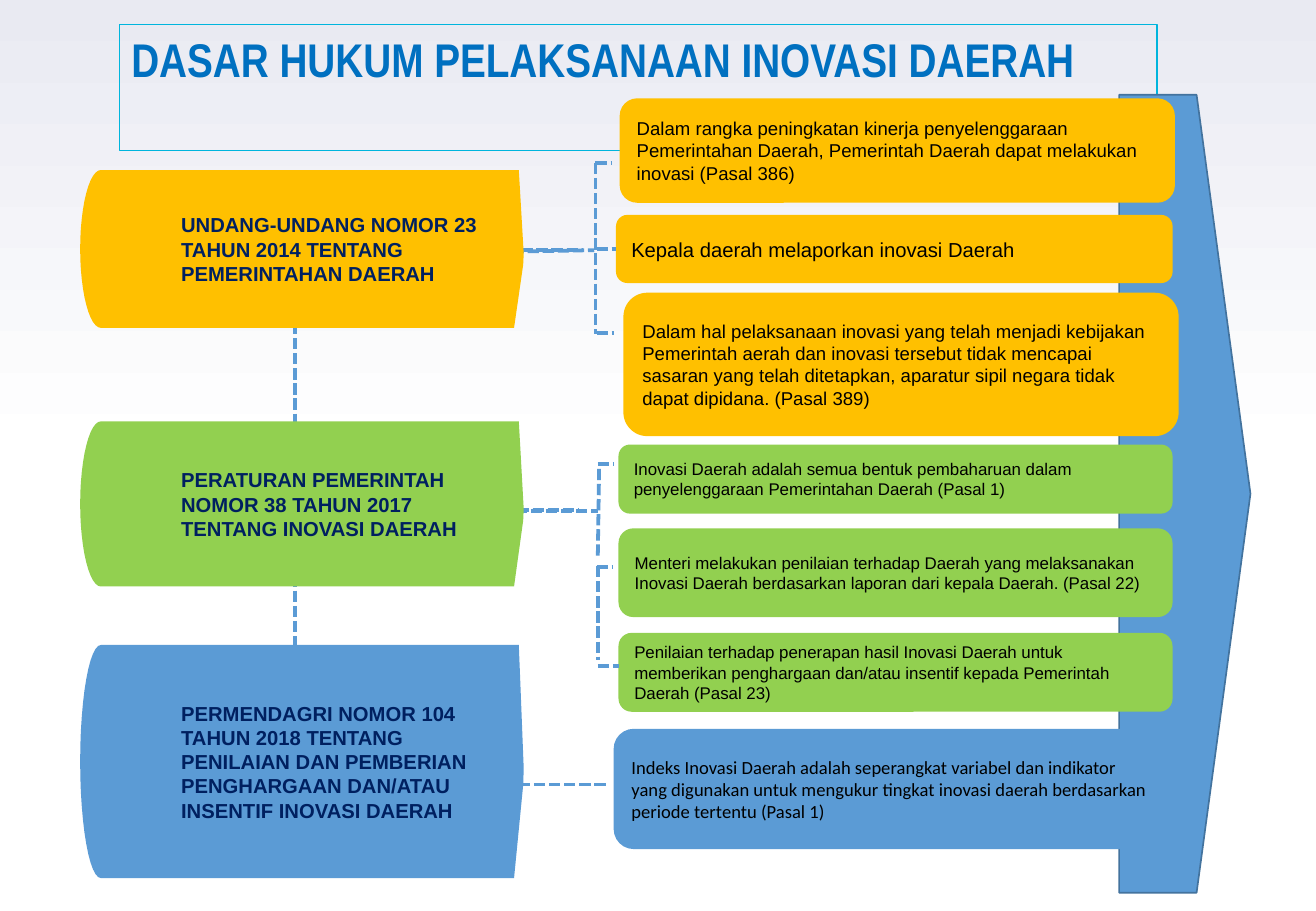
import math
import pptx
import pptx.util
import pptx.dml.color
import pptx.enum.dml
import pptx.enum.shapes
import pptx.enum.text
import pptx.oxml.ns
import lxml.etree

Pt = pptx.util.Pt
Shape = pptx.enum.shapes.MSO_SHAPE
Anchor = pptx.enum.text.MSO_ANCHOR

ORANGE, GREEN, BLUE = "FFC000", "92D050", "5B9BD5"


def rgb(value):
    return pptx.dml.color.RGBColor.from_string(value)


class LegalBasisSlide:
    TITLE = dict(name="Arial Narrow", size=Pt(28), bold=True, color="0070C0")
    CARD = dict(name="Arial", bold=False, color="000000")
    TAB = dict(name="Arial", size=Pt(12), bold=True, color="002060")

    def __init__(self, prs):
        self.s = prs.slides.add_slide(prs.slide_layouts[5])

    def background(self, bottom, top):
        fill = self.s.background.fill
        fill.gradient()
        fill.gradient_angle = 90
        for stop, position, color in zip(fill.gradient_stops, (0.5, 1), (bottom, top)):
            stop.position = position
            stop.color.rgb = rgb(color)

    def paint(self, sp, fill, line=None, width=1):
        sp.shadow.inherit = False
        if fill:
            sp.fill.solid()
            sp.fill.fore_color.rgb = rgb(fill)
        if line:
            sp.line.color.rgb = rgb(line)
            sp.line.width = Pt(width)
        else:
            sp.line.fill.background()

    def label(self, sp, text, font, anchor=Anchor.MIDDLE, left=7.2):
        tf = sp.text_frame
        frame = dict(word_wrap=True, auto_size=pptx.enum.text.MSO_AUTO_SIZE.NONE,
                     vertical_anchor=anchor, margin_left=Pt(left), margin_right=Pt(7.2),
                     margin_top=Pt(3.6), margin_bottom=Pt(3.6))
        for key, value in frame.items():
            setattr(tf, key, value)
        p = tf.paragraphs[0]
        p.alignment = pptx.enum.text.PP_ALIGN.LEFT
        r = p.add_run()
        r.text = text
        for key, value in font.items():
            if key == "color":
                r.font.color.rgb = rgb(value)
            else:
                setattr(r.font, key, value)

    def title(self, text, box):
        sp = self.s.shapes.title
        for key, value in zip(("left", "top", "width", "height"), box):
            setattr(sp, key, Pt(value))
        sp.line.color.rgb = rgb("00B5DD")
        sp.line.width = Pt(0.75)
        self.label(sp, text, self.TITLE, Anchor.TOP)

    def arrow(self, box):
        sp = self.s.shapes.add_shape(Shape.PENTAGON, *map(Pt, box))
        sp.adjustments[0] = 0.41
        self.paint(sp, BLUE, "43739E")

    def card(self, text, box, fill, size, name="Arial"):
        sp = self.s.shapes.add_shape(Shape.ROUNDED_RECTANGLE, *map(Pt, box))
        self.paint(sp, fill)
        self.label(sp, text, {**self.CARD, "size": Pt(size), "name": name})
        return sp

    def tab(self, text, top, height, fill):
        left, shoulder, middle = 47.5, 59.8, top + height / 2
        outline = [(307.4, top), (308.2, top + 0.14 * height), (310.3, top + 0.53 * height),
                   (310, top + 0.6 * height), (304.6, top + height)]
        for step in range(25):
            angle = math.pi * step / 24
            outline.append((shoulder - (shoulder - left) * math.sin(angle),
                            middle + height / 2 * math.cos(angle)))
        points = [(Pt(x), Pt(y)) for x, y in outline]
        builder = self.s.shapes.build_freeform(*points[0], scale=1.0)
        builder.add_line_segments(points[1:], close=True)
        sp = builder.convert_to_shape()
        self.paint(sp, fill)
        self.label(sp, text, self.TAB, left=59.8)

    def dash(self, x1, y1, x2, y2, target=None):
        c = self.s.shapes.add_connector(pptx.enum.shapes.MSO_CONNECTOR.STRAIGHT,
                                        Pt(x1), Pt(y1), Pt(x2), Pt(y2))
        if target is not None:
            c.end_connect(target, 1)
        c.line.color.rgb = rgb(BLUE)
        c.line.width = Pt(2.25)
        c.line.dash_style = pptx.enum.dml.MSO_LINE.SQUARE_DOT
        lxml.etree.SubElement(c.element.spPr, pptx.oxml.ns.qn("a:effectLst"))


CARDS = [
    ("Dalam rangka peningkatan kinerja penyelenggaraan Pemerintahan Daerah, Pemerintah "
     "Daerah dapat melakukan inovasi (Pasal 386)", (367.2, 58.3, 329, 61.9), ORANGE, 11),
    ("Kepala daerah melaporkan inovasi Daerah", (365, 127.4, 329.8, 40.4), ORANGE, 12),
    ("Dalam hal pelaksanaan inovasi yang telah menjadi kebijakan Pemerintah aerah dan "
     "inovasi tersebut tidak mencapai sasaran yang telah ditetapkan, aparatur sipil negara "
     "tidak dapat dipidana. (Pasal 389)", (369.4, 173.5, 329, 85), ORANGE, 11),
    ("Inovasi Daerah adalah semua bentuk pembaharuan dalam penyelenggaraan Pemerintahan "
     "Daerah (Pasal 1)", (366.5, 263.5, 328.3, 41), GREEN, 10),
    ("Menteri melakukan penilaian terhadap Daerah yang melaksanakan Inovasi Daerah "
     "berdasarkan laporan dari kepala Daerah. (Pasal 22)",
     (366.5, 313.2, 328.3, 52.6), GREEN, 10),
    ("Penilaian terhadap penerapan hasil Inovasi Daerah untuk memberikan penghargaan "
     "dan/atau insentif kepada Pemerintah Daerah (Pasal 23)",
     (366.5, 375.1, 328.3, 46.8), GREEN, 10),
    ("Indeks Inovasi Daerah adalah seperangkat variabel dan indikator yang digunakan untuk "
     "mengukur tingkat inovasi daerah berdasarkan periode tertentu (Pasal 1)",
     (363.6, 432, 327.6, 71.3), BLUE, 11, "Calibri"),
]

TABS = [
    ("UNDANG-UNDANG NOMOR 23 TAHUN 2014 TENTANG PEMERINTAHAN DAERAH", 100.8, 93.6, ORANGE),
    ("PERATURAN PEMERINTAH NOMOR 38 TAHUN 2017 TENTANG INOVASI DAERAH", 249.8, 97.9, GREEN),
    ("PERMENDAGRI NOMOR 104 TAHUN 2018 TENTANG PENILAIAN DAN PEMBERIAN PENGHARGAAN "
     "DAN/ATAU INSENTIF INOVASI DAERAH", 382.3, 138.2, BLUE),
]

DASHES = [
    (175, 173.5, 175, 259.2), (175, 260.6, 175, 416.9),
    (290.9, 148.3, 344.9, 148.3), (267.8, 149.8, 352.1, 148.3),
    (352.8, 96.5, 352.8, 198), (352.8, 96.5, 362.2, 96.5), (353.5, 197.3, 363.6, 197.3),
    (288.7, 302.4, 342.7, 302.4), (296.6, 303.1, 354.2, 303.1),
    (355, 277.9, 354.2, 331.2), (354.2, 335.5, 354.2, 391),
    (354.2, 275, 363.6, 275), (353.5, 336.2, 362.9, 336.2), (354.2, 394.6, 366.5, 394.6),
    (307.4, 465.1, 360.7, 465.1),
]


def main():
    prs = pptx.Presentation()
    prs.slide_width, prs.slide_height = Pt(779.76), Pt(540)
    slide = LegalBasisSlide(prs)
    slide.background("FFFFFF", "E9EAF2")
    slide.title("DASAR HUKUM PELAKSANAAN INOVASI DAERAH", (70.6, 14.4, 614.9, 74.9))
    slide.arrow((663.1, 56.2, 77.8, 473))
    cards = [slide.card(*card) for card in CARDS]
    for ends in DASHES:
        slide.dash(*ends)
    slide.dash(353.5, 147.6, 365, 147.6, cards[1])
    for tab in TABS:
        slide.tab(*tab)
    prs.save("out.pptx")


if __name__ == "__main__":
    main()
